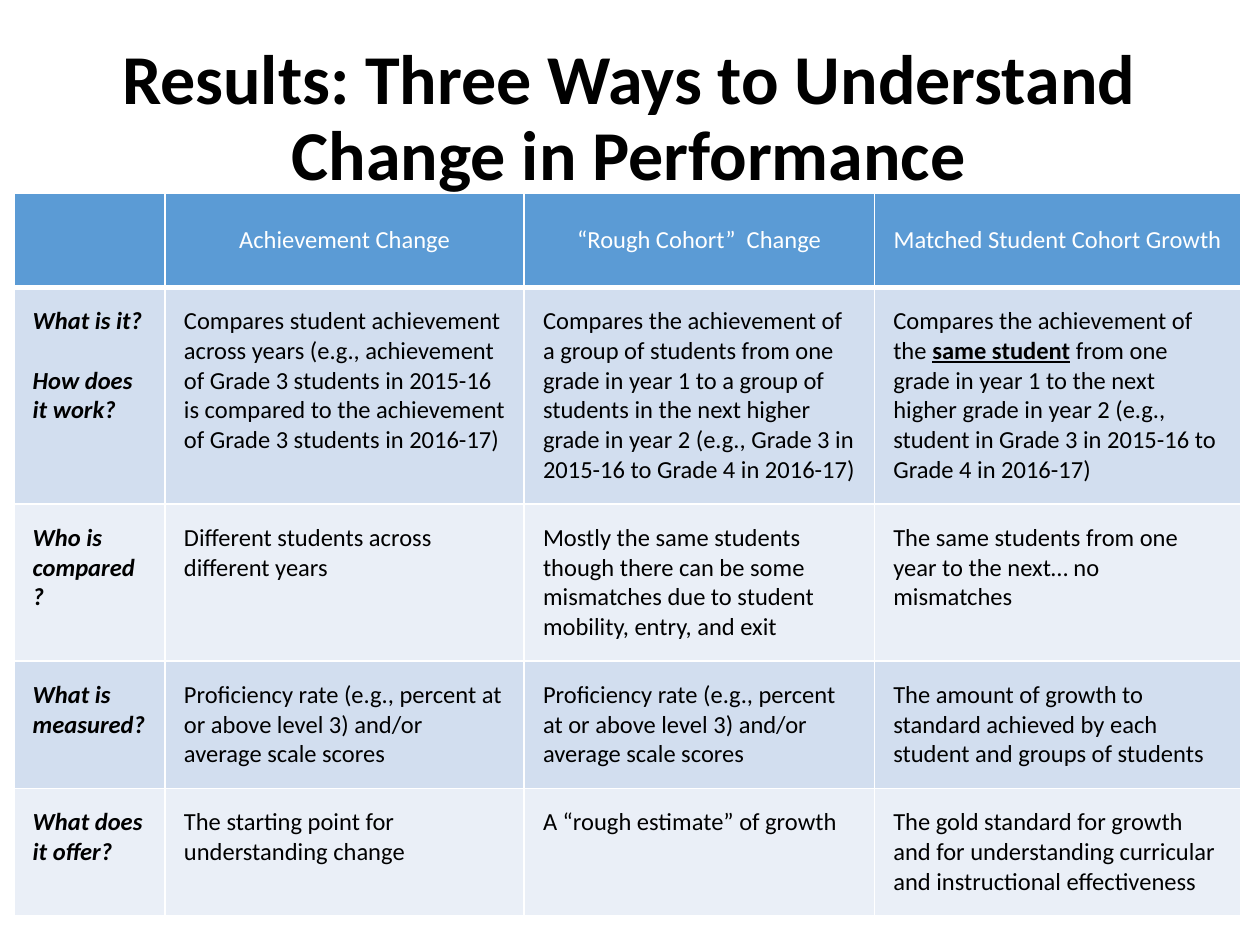
from typing import NamedTuple

from lxml import etree
from pptx import Presentation
from pptx.dml.color import RGBColor
from pptx.enum.text import MSO_ANCHOR, MSO_AUTO_SIZE, PP_ALIGN
from pptx.oxml.ns import qn
from pptx.util import Inches, Pt

CENTER, LEFT = PP_ALIGN.CENTER, PP_ALIGN.LEFT
MIDDLE, TOP = MSO_ANCHOR.MIDDLE, MSO_ANCHOR.TOP
NO_AUTOFIT = MSO_AUTO_SIZE.NONE

FONT = "Calibri"
BLACK, WHITE = "000000", "FFFFFF"
HEADER_FILL = "5B9BD5"
BAND_FILLS = ("D2DEEF", "EAEFF7")
TITLE_ONLY_LAYOUT = 5
COLUMN_WIDTHS = (1.2, 2.85, 2.78, 2.91)
ROW_HEIGHTS = (0.75, 1.67, 1.15, 0.93, 0.98)
CELL_MARGIN = Inches(0.15)
PROFICIENCY = ("Proficiency rate (e.g., percent at or above level 3) "
               "and/or average scale scores")


class Aspect(NamedTuple):
    """One table row: its questions and an answer per way of measuring."""
    questions: tuple
    achievement: str
    rough_cohort: str
    matched_cohort: str


HEADINGS = ("", "Achievement Change", "“Rough Cohort”  Change",
            "Matched Student Cohort Growth")

# Text between asterisks is bold and underlined
ASPECTS = (
    Aspect(("What is it?", "How does it work?"),
           "Compares student achievement across years (e.g., achievement of "
           "Grade 3 students in 2015-16 is compared to the achievement of "
           "Grade 3 students in 2016-17)",
           "Compares the achievement of a group of students from one grade in "
           "year 1 to a group of students in the next higher grade in year 2 "
           "(e.g., Grade 3 in 2015-16 to Grade 4 in 2016-17)",
           "Compares the achievement of the *same student* from one grade in "
           "year 1 to the next higher grade in year 2 (e.g., student in "
           "Grade 3 in 2015-16 to Grade 4 in 2016-17)"),
    Aspect(("Who is compared?",),
           "Different students across different years",
           "Mostly the same students though there can be some mismatches due "
           "to student mobility, entry, and exit",
           "The same students from one year to the next… no mismatches"),
    Aspect(("What is measured?",), PROFICIENCY, PROFICIENCY,
           "The amount of growth to standard achieved by each student and "
           "groups of students"),
    Aspect(("What does it offer?",),
           "The starting point for understanding change",
           "A “rough estimate” of growth",
           "The gold standard for growth and for understanding curricular and "
           "instructional effectiveness"),
)


def color(hex_value: str) -> RGBColor:
    return RGBColor.from_string(hex_value)


def set_font(font, size: int, hex_value: str, bold=False, italic=False) -> None:
    font.name, font.size = FONT, Pt(size)
    font.bold, font.italic = bold, italic
    font.color.rgb = color(hex_value)


def set_borders(cell, bottom_points: int) -> None:
    properties = cell._tc.get_or_add_tcPr()
    for side, points in (("L", 1), ("R", 1), ("T", 1), ("B", bottom_points)):
        line = etree.SubElement(properties, qn(f"a:ln{side}"), w=str(Pt(points)))
        fill = etree.SubElement(line, qn("a:solidFill"))
        etree.SubElement(fill, qn("a:srgbClr"), val=WHITE)


def fill_cell(cell, texts: tuple, fill: str, header=False, question=False) -> None:
    set_borders(cell, 3 if header else 1)
    cell.fill.solid()
    cell.fill.fore_color.rgb = color(fill)
    cell.margin_left = cell.margin_right = CELL_MARGIN
    cell.margin_top = cell.margin_bottom = CELL_MARGIN
    cell.vertical_anchor = MIDDLE if header else TOP
    frame = cell.text_frame
    for index, text in enumerate(texts):
        para = frame.add_paragraph() if index else frame.paragraphs[0]
        if index:
            para.space_before = Pt(17)
        para.alignment = CENTER if header else LEFT
        set_font(para.font, 14, WHITE if header else BLACK, question, question)
        for part, words in enumerate(text.split("*")):
            span = para.add_run()
            span.text = words
            # Runs carry the format too, as the table style would override it
            emphasized = part % 2 == 1
            set_font(span.font, 14, WHITE if header else BLACK,
                     question or emphasized, question)
            if emphasized:
                span.font.underline = True


def add_title(slide, text: str) -> None:
    title = slide.shapes.title
    title.left, title.top = Inches(0), Inches(0.4)
    title.width, title.height = Inches(9.98), Inches(1.1)
    frame = title.text_frame
    frame.text = text
    frame.word_wrap = True
    frame.auto_size = NO_AUTOFIT
    frame.vertical_anchor = MIDDLE
    para = frame.paragraphs[0]
    para.alignment, para.line_spacing = CENTER, 0.9
    set_font(para.font, 40, BLACK, bold=True)


def add_comparison(slide) -> None:
    table = slide.shapes.add_table(
        len(ROW_HEIGHTS), len(COLUMN_WIDTHS), Inches(0.11), Inches(1.53),
        Inches(sum(COLUMN_WIDTHS)), Inches(sum(ROW_HEIGHTS))).table
    for column, width in zip(table.columns, COLUMN_WIDTHS):
        column.width = Inches(width)
    for row, height in zip(table.rows, ROW_HEIGHTS):
        row.height = Inches(height)

    # Header row
    for column, heading in enumerate(HEADINGS):
        fill_cell(table.cell(0, column), (heading,), HEADER_FILL, header=True)

    # Banded body rows
    for row, aspect in enumerate(ASPECTS, start=1):
        fill = BAND_FILLS[(row - 1) % 2]
        fill_cell(table.cell(row, 0), aspect.questions, fill, question=True)
        for column, answer in enumerate(aspect[1:], start=1):
            fill_cell(table.cell(row, column), (answer,), fill)


def main() -> None:
    deck = Presentation()
    deck.slide_width, deck.slide_height = Inches(10), Inches(7.5)
    slide = deck.slides.add_slide(deck.slide_layouts[TITLE_ONLY_LAYOUT])
    add_title(slide, "Results: Three Ways to Understand Change in Performance")
    add_comparison(slide)
    deck.save("out.pptx")


if __name__ == "__main__":
    main()
